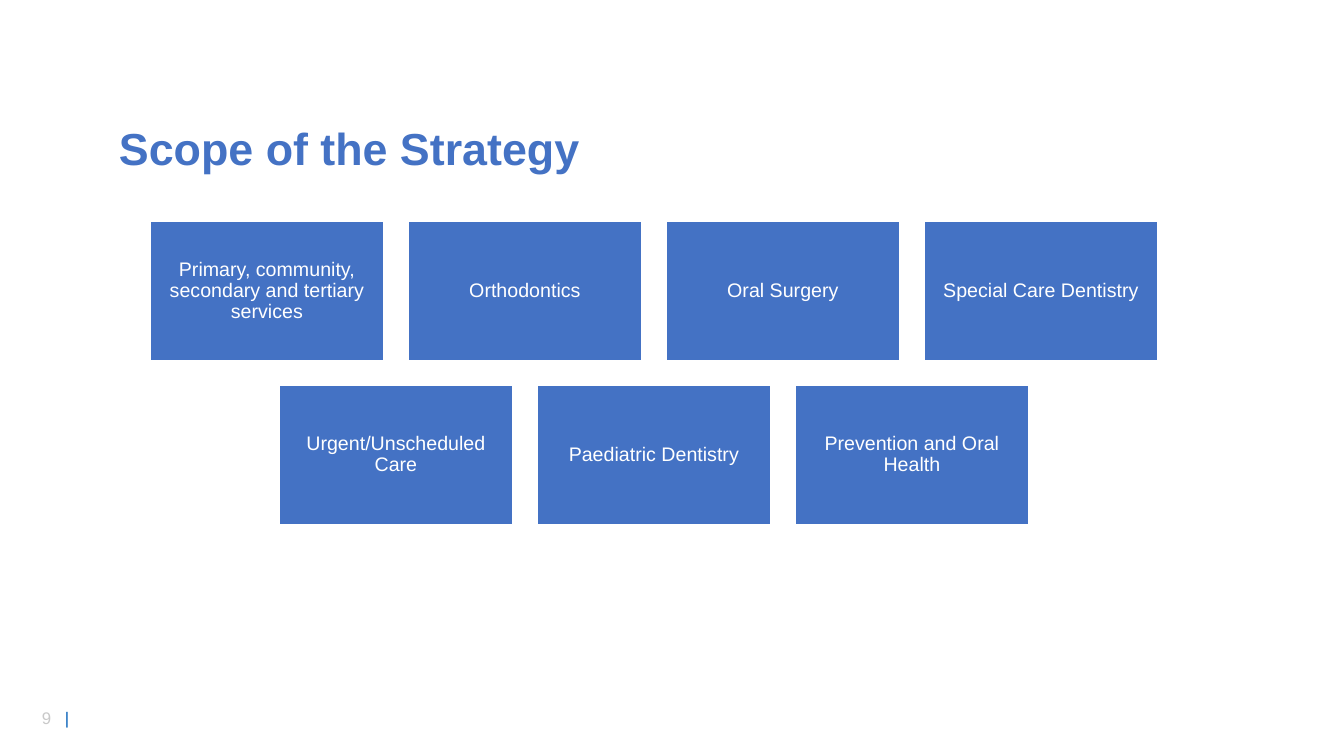
from dataclasses import dataclass

import pptx
import pptx.dml.color
import pptx.enum.shapes
import pptx.enum.text
import pptx.oxml
import pptx.oxml.ns
import pptx.util

PX = 12192000 / 1344
ANCHOR = pptx.enum.text.MSO_ANCHOR
ALIGN = pptx.enum.text.PP_ALIGN


def px(count):
    return pptx.util.Emu(round(count * PX))


def rgb(value):
    return pptx.dml.color.RGBColor.from_string(value)


@dataclass(frozen=True)
class Theme:
    font: str = "Arial"
    blue: str = "4472C4"
    white: str = "FFFFFF"
    grey: str = "C9C9C9"
    bar_blue: str = "005EB8"
    title_size: int = 32
    box_size: int = 14
    footer_size: int = 12


def write(paragraph, text, *, font, size, color, bold=False):
    run = paragraph.add_run()
    run.text = text
    run.font.name = font
    run.font.size = pptx.util.Pt(size)
    run.font.bold = bold
    run.font.color.rgb = rgb(color)


class ScopeSlide:
    """Draws styled elements on one slide."""

    def __init__(self, presentation, theme):
        self.theme = theme
        self.slide = presentation.slides.add_slide(presentation.slide_layouts[6])

    def prepare(self, shape, anchor, inset_x, inset_y):
        frame = shape.text_frame
        frame.word_wrap = True
        frame.vertical_anchor = anchor
        frame.margin_left = frame.margin_right = px(inset_x)
        frame.margin_top = frame.margin_bottom = px(inset_y)
        return frame.paragraphs[0]

    def text_box(self, left, top, width, height, anchor=ANCHOR.TOP):
        shape = self.slide.shapes.add_textbox(px(left), px(top), px(width), px(height))
        return self.prepare(shape, anchor, 10, 5)

    def title(self, text):
        paragraph = self.text_box(109, 118, 1008, 67, ANCHOR.MIDDLE)
        paragraph.line_spacing = 0.9
        write(paragraph, text, font=self.theme.font, size=self.theme.title_size,
              color=self.theme.blue, bold=True)

    def page_number(self, number):
        paragraph = self.text_box(32, 703, 72, 30)
        properties = paragraph._p.get_or_add_pPr()
        tabs = pptx.oxml.parse_xml(
            f'<a:tabLst {pptx.oxml.ns.nsdecls("a")}>'
            f'<a:tab pos="{px(23)}" algn="l"/></a:tabLst>')
        properties.append(tabs)
        for text, color in ((f"{number}\t", self.theme.grey), ("|", self.theme.bar_blue)):
            write(paragraph, text, font=self.theme.font,
                  size=self.theme.footer_size, color=color)

    def box(self, text, left, top, width, height):
        shape = self.slide.shapes.add_shape(
            pptx.enum.shapes.MSO_SHAPE.RECTANGLE, px(left), px(top), px(width), px(height))
        shape.shadow.inherit = False
        shape.fill.solid()
        shape.fill.fore_color.rgb = rgb(self.theme.blue)
        shape.line.color.rgb = rgb(self.theme.white)
        shape.line.width = pptx.util.Pt(1)
        paragraph = self.prepare(shape, ANCHOR.MIDDLE, 6, 6)
        paragraph.alignment = ALIGN.CENTER
        paragraph.line_spacing = 0.9
        write(paragraph, text, font=self.theme.font,
              size=self.theme.box_size, color=self.theme.white)

    def centred_rows(self, rows, center, top, width, height, gap):
        for row, labels in enumerate(rows):
            row_width = len(labels) * (width + gap) - gap
            for column, label in enumerate(labels):
                left = center - row_width // 2 + column * (width + gap)
                self.box(label, left, top + row * (height + gap), width, height)


def main():
    presentation = pptx.Presentation()
    presentation.slide_width = px(1344)
    presentation.slide_height = px(756)
    scope = ScopeSlide(presentation, Theme())
    scope.page_number(9)
    scope.title("Scope of the Strategy")
    services = (
        ("Primary, community, secondary and tertiary services", "Orthodontics",
         "Oral Surgery", "Special Care Dentistry"),
        ("Urgent/Unscheduled Care", "Paediatric Dentistry", "Prevention and Oral Health"),
    )
    scope.centred_rows(services, center=654, top=221, width=234, height=140, gap=24)
    presentation.save("out.pptx")


if __name__ == "__main__":
    main()
